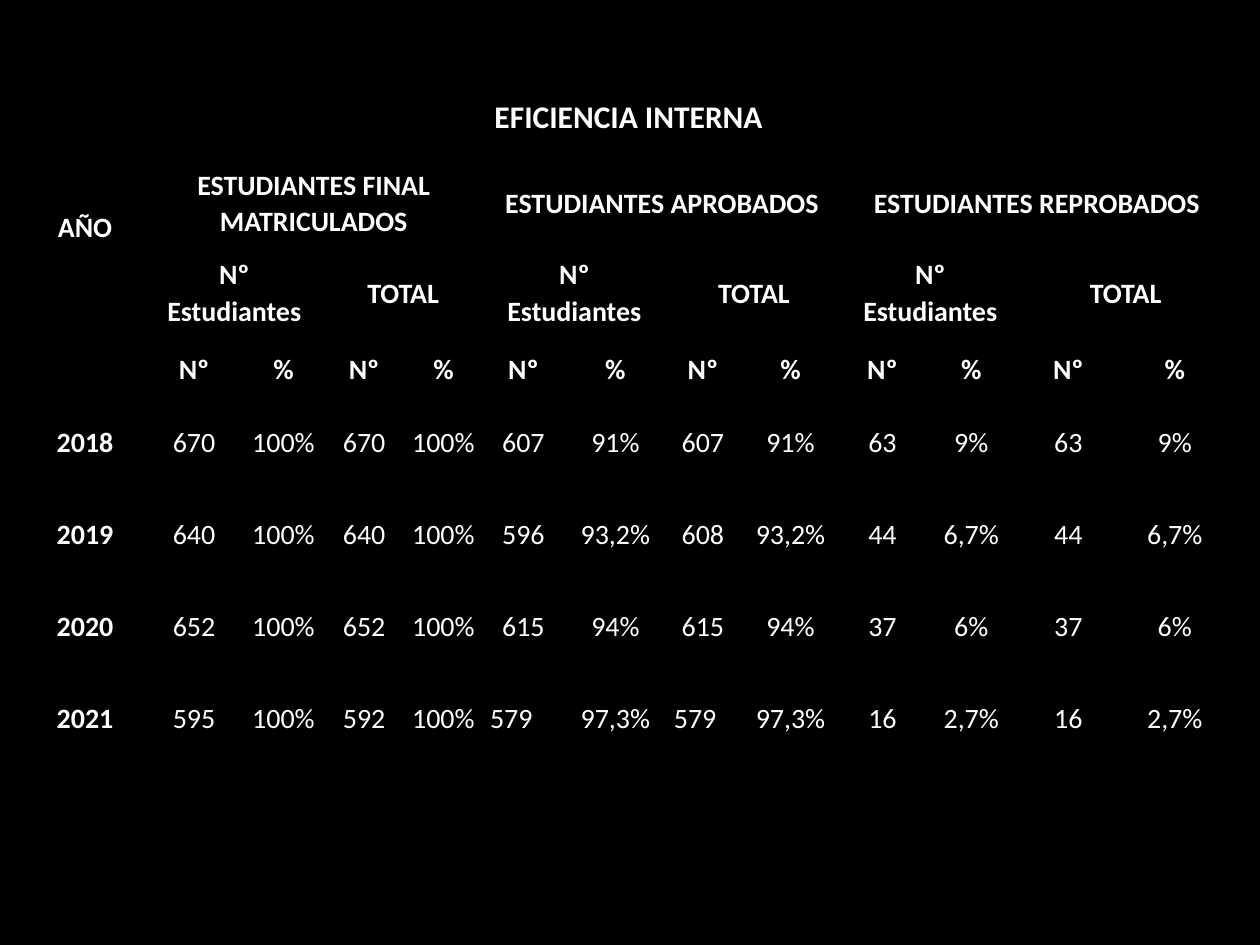
from typing import NamedTuple

from lxml.etree import SubElement
from pptx import Presentation
from pptx.dml.color import RGBColor
from pptx.enum.text import MSO_ANCHOR, PP_ALIGN
from pptx.oxml.ns import qn
from pptx.util import Inches, Pt

COLORS = {"background": "000000", "border": "000000", "text": "FFFFFF"}
FONT = "Calibri"
COLUMN_WIDTHS = [0.95, 0.78, 0.64, 0.64, 0.62, 0.65, 0.81,
                 0.58, 0.81, 0.65, 0.76, 0.78, 0.91]
ROW_HEIGHTS = [0.73, 0.64, 0.78, 0.43, 0.73, 0.73, 0.73, 0.73]
THICK_COLUMN_EDGES = {0, 1, 5, 9, 13}
THICK_ROW_EDGES = {0, 1, 4, 8}
THIN, THICK = Pt(1), Pt(2.25)
GROUPS = ["ESTUDIANTES FINAL MATRICULADOS", "ESTUDIANTES APROBADOS",
          "ESTUDIANTES REPROBADOS"]
GROUP_SPAN = 4
FIRST_YEAR_ROW = 4


class GroupResult(NamedTuple):
    students: str
    students_share: str
    total: str
    total_share: str


class YearResult(NamedTuple):
    year: str
    enrolled: GroupResult
    passed: GroupResult
    failed: GroupResult


YEARS = [
    YearResult("2018", GroupResult("670", "100%", "670", "100%"),
               GroupResult("607", "91%", "607", "91%"),
               GroupResult("63", "9%", "63", "9%")),
    YearResult("2019", GroupResult("640", "100%", "640", "100%"),
               GroupResult("596", "93,2%", "608", "93,2%"),
               GroupResult("44", "6,7%", "44", "6,7%")),
    YearResult("2020", GroupResult("652", "100%", "652", "100%"),
               GroupResult("615", "94%", "615", "94%"),
               GroupResult("37", "6%", "37", "6%")),
    YearResult("2021", GroupResult("595", "100%", "592", "100%"),
               GroupResult("579", "97,3%", "579", "97,3%"),
               GroupResult("16", "2,7%", "16", "2,7%")),
]


def add_border(properties, side: str, width: int, position: int) -> None:
    line = SubElement(properties, qn(f"a:{side}"), w=str(width))
    fill = SubElement(line, qn("a:solidFill"))
    SubElement(fill, qn("a:srgbClr"), val=COLORS["border"])
    properties.insert(position, line)


def format_cell(cell, row: int, column: int) -> None:
    """Clear the fill and draw thick borders where a block begins or ends."""
    cell.fill.background()
    bottom = row + (cell.span_height if cell.is_merge_origin else 1)
    right = column + (cell.span_width if cell.is_merge_origin else 1)
    edges = [("lnL", column in THICK_COLUMN_EDGES),
             ("lnR", right in THICK_COLUMN_EDGES),
             ("lnT", row in THICK_ROW_EDGES),
             ("lnB", bottom in THICK_ROW_EDGES)]
    properties = cell._tc.get_or_add_tcPr()
    for position, (side, is_thick) in enumerate(edges):
        add_border(properties, side, THICK if is_thick else THIN, position)


def write(cell, text: str, *, size: float = 16, bold: bool = True,
          align: PP_ALIGN = PP_ALIGN.CENTER, bottom: float = 0) -> None:
    cell.vertical_anchor = MSO_ANCHOR.MIDDLE
    cell.margin_left = cell.margin_right = Inches(0.06)
    cell.margin_top, cell.margin_bottom = 0, Inches(bottom)
    paragraph = cell.text_frame.paragraphs[0]
    paragraph.alignment = align
    paragraph.line_spacing = 1.07
    paragraph.space_after = Pt(8)
    run = paragraph.add_run()
    run.text = text
    run.font.name = FONT
    run.font.size = Pt(size)
    run.font.bold = bold
    run.font.color.rgb = RGBColor.from_string(COLORS["text"])


def write_headings(table) -> None:
    last_column = len(COLUMN_WIDTHS) - 1
    table.cell(0, 0).merge(table.cell(0, last_column))
    write(table.cell(0, 0), "EFICIENCIA INTERNA", size=18)
    table.cell(1, 0).merge(table.cell(2, 0))
    write(table.cell(1, 0), "AÑO", bottom=0.4)
    for index, group in enumerate(GROUPS):
        start = 1 + index * GROUP_SPAN
        table.cell(1, start).merge(table.cell(1, start + GROUP_SPAN - 1))
        write(table.cell(1, start), group)
        for offset, measure in ((0, "Nº Estudiantes"), (2, "TOTAL")):
            left = start + offset
            table.cell(2, left).merge(table.cell(2, left + 1))
            write(table.cell(2, left), measure)
            write(table.cell(3, left), "Nº")
            write(table.cell(3, left + 1), "%")


def write_year(table, row: int, result: YearResult) -> None:
    write(table.cell(row, 0), result.year)
    values = [*result.enrolled, *result.passed, *result.failed]
    for column, value in enumerate(values, start=1):
        left_aligned = result.year == "2021" and column in (5, 7)
        write(table.cell(row, column), value, bold=False,
              align=PP_ALIGN.LEFT if left_aligned else PP_ALIGN.CENTER)


def main() -> None:
    presentation = Presentation()
    presentation.slide_width = Inches(10)
    presentation.slide_height = Inches(7.5)
    slide = presentation.slides.add_slide(presentation.slide_layouts[6])
    background = slide.background.fill
    background.solid()
    background.fore_color.rgb = RGBColor.from_string(COLORS["background"])

    table = slide.shapes.add_table(
        len(ROW_HEIGHTS), len(COLUMN_WIDTHS), Inches(0.2), Inches(0.56),
        Inches(sum(COLUMN_WIDTHS)), Inches(sum(ROW_HEIGHTS))).table
    table.first_row = table.horz_banding = False
    for column, width in zip(table.columns, COLUMN_WIDTHS):
        column.width = Inches(width)
    for row, height in zip(table.rows, ROW_HEIGHTS):
        row.height = Inches(height)

    write_headings(table)
    for row_index, result in enumerate(YEARS, start=FIRST_YEAR_ROW):
        write_year(table, row_index, result)
    for row_index in range(len(ROW_HEIGHTS)):
        for column_index in range(len(COLUMN_WIDTHS)):
            format_cell(table.cell(row_index, column_index),
                        row_index, column_index)

    presentation.save("out.pptx")


if __name__ == "__main__":
    main()
